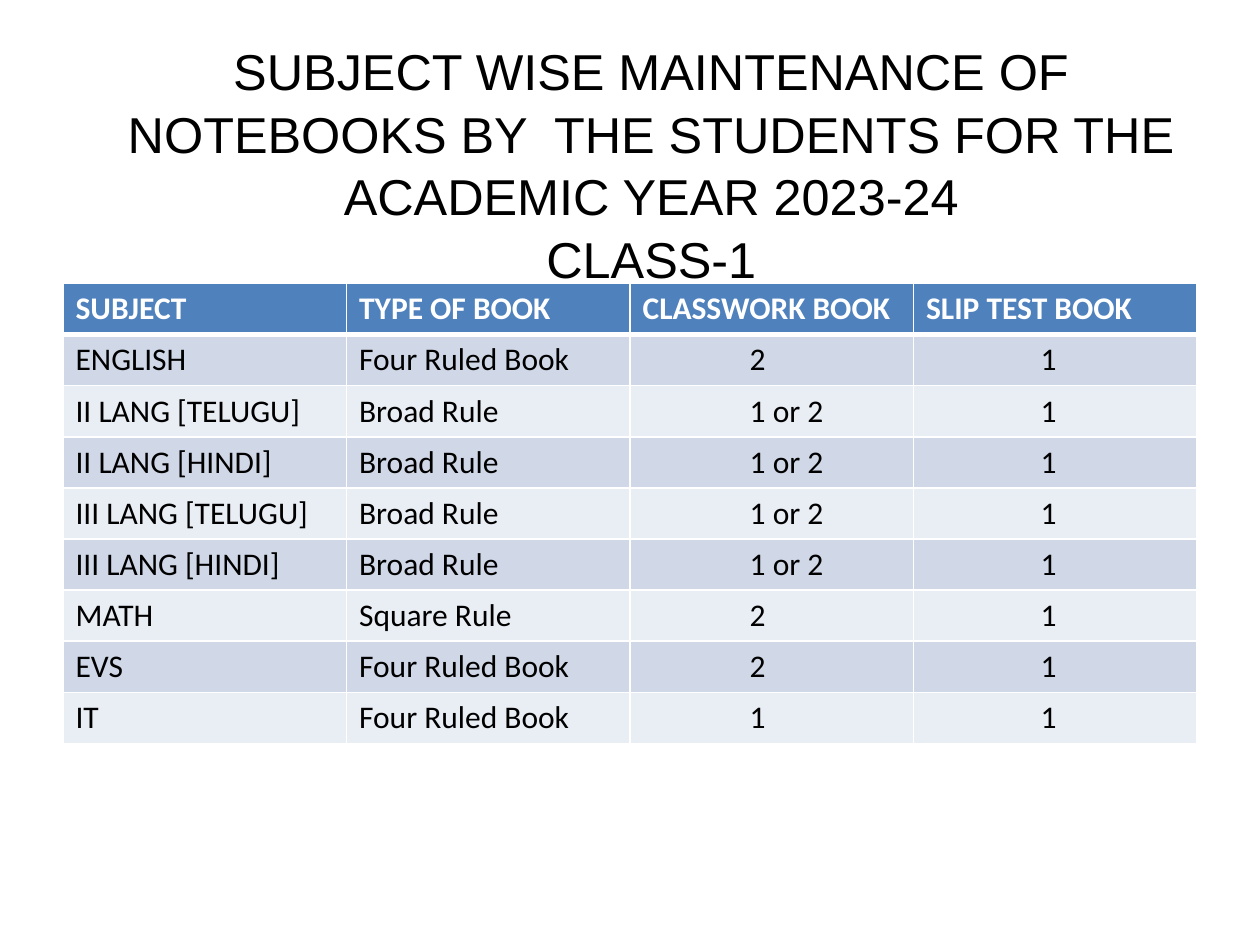
import dataclasses

import lxml.etree
import pptx
import pptx.dml.color
import pptx.enum.text
import pptx.oxml.ns
import pptx.util

Inches = pptx.util.Inches
Pt = pptx.util.Pt


@dataclasses.dataclass(frozen=True)
class Theme:
    title_font: str = "Arial"
    table_font: str = "Calibri"
    title_size: float = 28.8
    table_size: float = 18
    text: str = "000000"
    white: str = "FFFFFF"
    header: str = "4F81BD"
    bands: tuple = ("D0D8E8", "E9EDF4")
    thin_border: float = 1
    thick_border: float = 3


THEME = Theme()
TITLE = (
    "SUBJECT WISE MAINTENANCE OF NOTEBOOKS BY  THE STUDENTS "
    "FOR THE ACADEMIC YEAR 2023-24\vCLASS-1"
)
HEADINGS = ("SUBJECT", "TYPE OF BOOK", "CLASSWORK BOOK", "SLIP TEST BOOK")
NOTEBOOKS = (
    ("ENGLISH", "Four Ruled Book", "2", "1"),
    ("II LANG [TELUGU]", "Broad Rule", "1 or 2", "1"),
    ("II LANG [HINDI]", "Broad Rule", "1 or 2", "1"),
    ("III LANG [TELUGU]", "Broad Rule", "1 or 2", "1"),
    ("III LANG [HINDI]", "Broad Rule", "1 or 2", "1"),
    ("MATH", "Square Rule", "2", "1"),
    ("EVS", "Four Ruled Book", "2", "1"),
    ("IT", "Four Ruled Book", "1", "1"),
)
COLUMN_INDENTS = (0.1, 0.1, 0.95, 1.01)


def set_attributes(target, values):
    for name, value in values.items():
        setattr(target, name, value)


def format_runs(paragraph, color, **values):
    for run in paragraph.runs:
        set_attributes(run.font, values)
        run.font.color.rgb = pptx.dml.color.RGBColor.from_string(color)


def add_title(slide):
    title = slide.shapes.title
    set_attributes(title, {
        "left": Inches(0.67), "top": Inches(0.67),
        "width": Inches(9), "height": Inches(1.25),
    })
    set_attributes(title.text_frame, {
        "text": TITLE,
        "word_wrap": True,
        "auto_size": pptx.enum.text.MSO_AUTO_SIZE.NONE,
        "vertical_anchor": pptx.enum.text.MSO_ANCHOR.MIDDLE,
    })
    paragraph = title.text_frame.paragraphs[0]
    set_attributes(paragraph, {
        "alignment": pptx.enum.text.PP_ALIGN.CENTER,
        "line_spacing": 1.04,
    })
    format_runs(paragraph, THEME.text, name=THEME.title_font,
                size=Pt(THEME.title_size))


def add_borders(cell, widths):
    properties = cell._tc.get_or_add_tcPr()
    for side, width in widths.items():
        line = lxml.etree.SubElement(
            properties, pptx.oxml.ns.qn(f"a:ln{side}"), w=str(Pt(width)))
        fill = lxml.etree.SubElement(line, pptx.oxml.ns.qn("a:solidFill"))
        lxml.etree.SubElement(
            fill, pptx.oxml.ns.qn("a:srgbClr"), val=THEME.white)


def format_cell(cell, text, row, indent):
    is_header = row == 0
    thin, thick = THEME.thin_border, THEME.thick_border
    add_borders(cell, {
        "L": thin,
        "R": thin,
        "T": thick if row == 1 else thin,
        "B": thick if is_header else thin,
    })
    background = THEME.header if is_header else THEME.bands[(row - 1) % 2]
    cell.fill.solid()
    cell.fill.fore_color.rgb = pptx.dml.color.RGBColor.from_string(background)
    set_attributes(cell, {"text": text, "margin_left": Inches(indent)})
    format_runs(cell.text_frame.paragraphs[0],
                THEME.white if is_header else THEME.text,
                name=THEME.table_font, size=Pt(THEME.table_size),
                bold=is_header)


def add_notebook_table(slide):
    rows = (HEADINGS, *NOTEBOOKS)
    table = slide.shapes.add_table(
        len(rows), len(HEADINGS),
        Inches(0.5), Inches(2.25), Inches(9), Inches(3.65)).table
    for row, texts in enumerate(rows):
        for column, text in enumerate(texts):
            indent = 0.1 if row == 0 else COLUMN_INDENTS[column]
            format_cell(table.cell(row, column), text, row, indent)


def main():
    presentation = pptx.Presentation()
    set_attributes(presentation, {
        "slide_width": Inches(10), "slide_height": Inches(7.5),
    })
    slide = presentation.slides.add_slide(presentation.slide_layouts[5])
    add_title(slide)
    add_notebook_table(slide)
    presentation.save("out.pptx")


if __name__ == "__main__":
    main()
